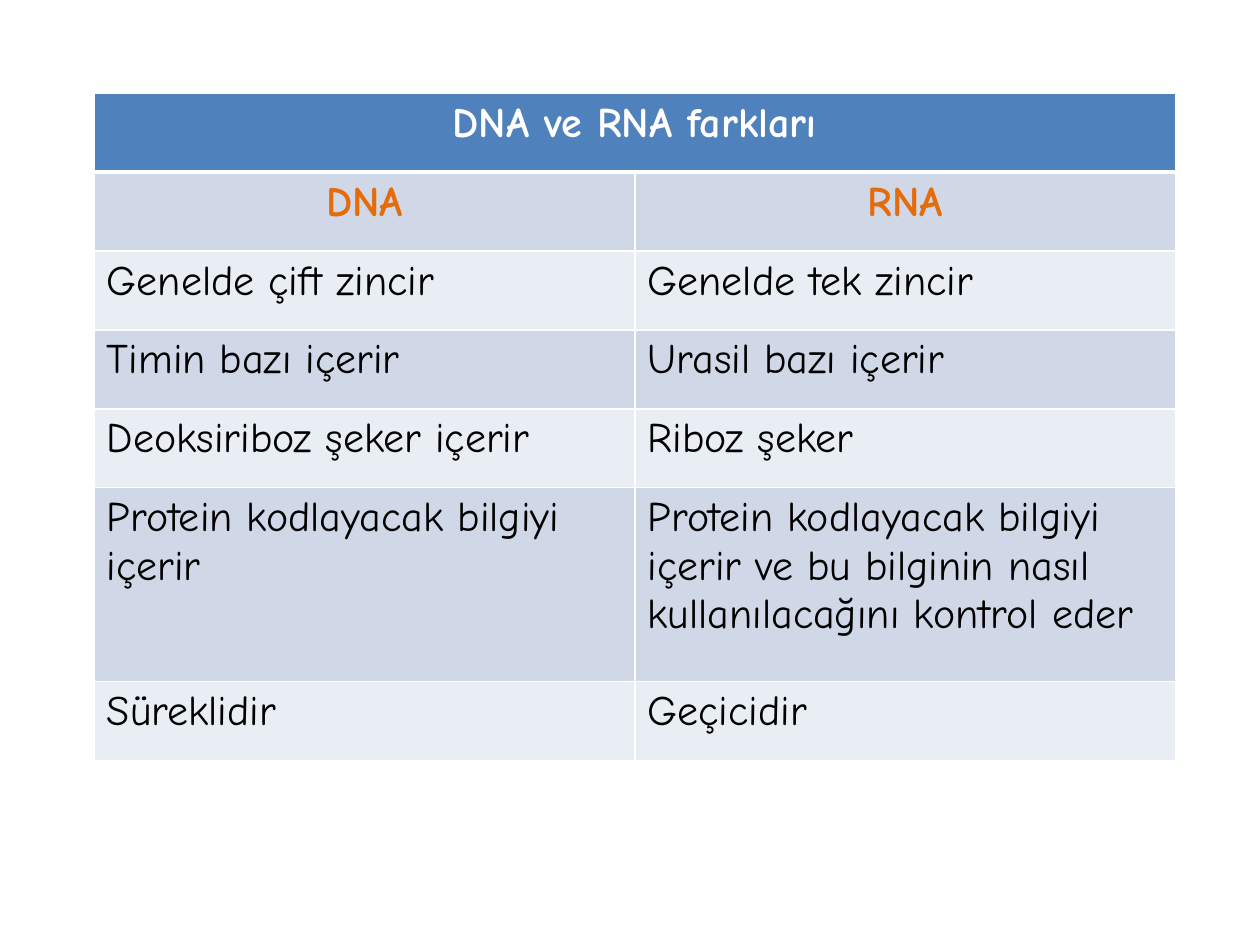
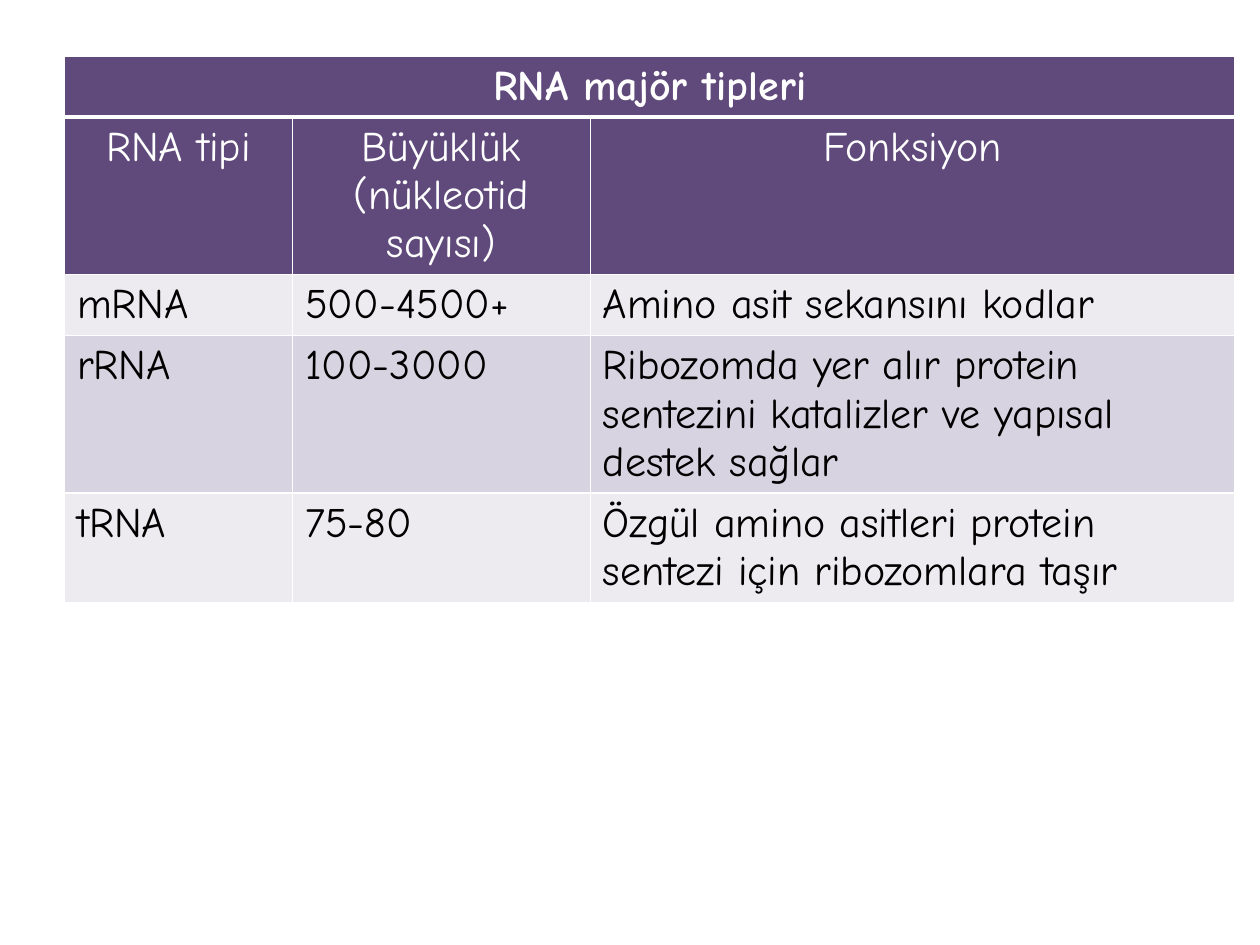
from dataclasses import dataclass

from lxml import etree
from pptx import Presentation
from pptx import util as u
from pptx.dml.color import RGBColor
from pptx.enum import text
from pptx.oxml.ns import qn

# Shared look
FONT = "Comic Neue"
TEXT_SIZE = u.Pt(24)
WHITE, BLACK, ORANGE = "FFFFFF", "000000", "E46C0A"
THIN, THICK = u.Pt(1), u.Pt(3)
BLANK_LAYOUT = 6


@dataclass(frozen=True)
class RowStyle:
    fill: str
    color: str = BLACK
    bold: bool = False
    centred: bool = False


@dataclass(frozen=True)
class Row:
    style: RowStyle
    height: float
    texts: tuple[str, ...]


@dataclass(frozen=True)
class TableSlide:
    left: float
    top: float
    widths: tuple[float, ...]
    rows: tuple[Row, ...]


def rgb(value: str) -> RGBColor:
    return RGBColor.from_string(value)


def fitted_height(lines: int) -> float:
    """Row height in centimetres that just holds the given text lines."""
    return 0.25 + 0.97 * lines


def set_borders(cell, top: int, bottom: int) -> None:
    """Draw white borders; the line elements must precede the cell fill."""
    properties = cell._tc.get_or_add_tcPr()
    widths = {"a:lnL": THIN, "a:lnR": THIN, "a:lnT": top, "a:lnB": bottom}
    for position, (tag, width) in enumerate(widths.items()):
        line = etree.Element(qn(tag), w=str(int(width)))
        fill = etree.SubElement(line, qn("a:solidFill"))
        etree.SubElement(fill, qn("a:srgbClr"), val=WHITE)
        properties.insert(position, line)


def format_cell(cell, content: str, style: RowStyle) -> None:
    cell.fill.solid()
    cell.fill.fore_color.rgb = rgb(style.fill)
    cell.text_frame.text = content
    paragraph = cell.text_frame.paragraphs[0]
    paragraph.alignment = text.PP_ALIGN.CENTER if style.centred else text.PP_ALIGN.LEFT
    for run in paragraph.runs:
        run.font.name = FONT
        run.font.size = TEXT_SIZE
        run.font.bold = style.bold
        run.font.color.rgb = rgb(style.color)


def add_table_slide(presentation, content: TableSlide) -> None:
    slide = presentation.slides.add_slide(presentation.slide_layouts[BLANK_LAYOUT])
    frame = slide.shapes.add_table(
        len(content.rows), len(content.widths),
        u.Cm(content.left), u.Cm(content.top),
        u.Cm(sum(content.widths)), u.Cm(sum(row.height for row in content.rows)),
    )
    table = frame.table
    table.first_row = table.horz_banding = False
    for column, width in zip(table.columns, content.widths):
        column.width = u.Cm(width)

    # The first row is one heading across all columns
    table.cell(0, 0).merge(table.cell(0, len(content.widths) - 1))
    for index, row in enumerate(content.rows):
        table.rows[index].height = u.Cm(row.height)
        for cell, cell_text in zip(table.rows[index].cells, row.texts):
            format_cell(cell, cell_text, row.style)
        for cell in table.rows[index].cells:
            set_borders(cell, THICK if index == 1 else THIN, THICK if index == 0 else THIN)


# Differences between DNA and RNA
BLUE_HEADING = RowStyle("4F81BD", WHITE, bold=True, centred=True)
BLUE_COLUMNS = RowStyle("D0D8E8", ORANGE, bold=True, centred=True)
BLUE_DARK, BLUE_LIGHT = RowStyle("D0D8E8"), RowStyle("E9EDF4")
EVEN_HEIGHT = 1.59

DIFFERENCES = TableSlide(1.9, 1.88, (10.9, 10.9), (
    Row(BLUE_HEADING, EVEN_HEIGHT, ("DNA ve RNA farkları",)),
    Row(BLUE_COLUMNS, EVEN_HEIGHT, ("DNA", "RNA")),
    Row(BLUE_LIGHT, EVEN_HEIGHT, ("Genelde çift zincir", "Genelde tek zincir")),
    Row(BLUE_DARK, EVEN_HEIGHT, ("Timin bazı içerir", "Urasil bazı içerir")),
    Row(BLUE_LIGHT, EVEN_HEIGHT, ("Deoksiriboz şeker içerir", "Riboz şeker")),
    Row(BLUE_DARK, 3.91, (
        "Protein kodlayacak bilgiyi içerir",
        "Protein kodlayacak bilgiyi içerir ve bu bilginin nasıl kullanılacağını kontrol eder",
    )),
    Row(BLUE_LIGHT, EVEN_HEIGHT, ("Süreklidir", "Geçicidir")),
))

# Major types of RNA
PURPLE_HEADING = RowStyle("604A7B", WHITE, bold=True, centred=True)
PURPLE_COLUMNS = RowStyle("604A7B", WHITE, centred=True)
PURPLE_DARK, PURPLE_LIGHT = RowStyle("D8D3E0"), RowStyle("EDEAF0")

RNA_TYPES = TableSlide(1.3, 1.13, (4.6, 6, 13), (
    Row(PURPLE_HEADING, fitted_height(1), ("RNA majör tipleri",)),
    Row(PURPLE_COLUMNS, fitted_height(3),
        ("RNA tipi", "Büyüklük (nükleotid sayısı)", "Fonksiyon")),
    Row(PURPLE_LIGHT, fitted_height(1),
        ("mRNA", "500-4500+", "Amino asit sekansını kodlar")),
    Row(PURPLE_DARK, fitted_height(3),
        ("rRNA", "100-3000",
         "Ribozomda yer alır protein sentezini katalizler ve yapısal destek sağlar")),
    Row(PURPLE_LIGHT, fitted_height(2),
        ("tRNA", "75-80", "Özgül amino asitleri protein sentezi için ribozomlara taşır")),
))


def main() -> None:
    presentation = Presentation()
    presentation.slide_width, presentation.slide_height = u.Cm(25.4), u.Cm(19.05)
    for content in (DIFFERENCES, RNA_TYPES):
        add_table_slide(presentation, content)
    presentation.save("out.pptx")


if __name__ == "__main__":
    main()
